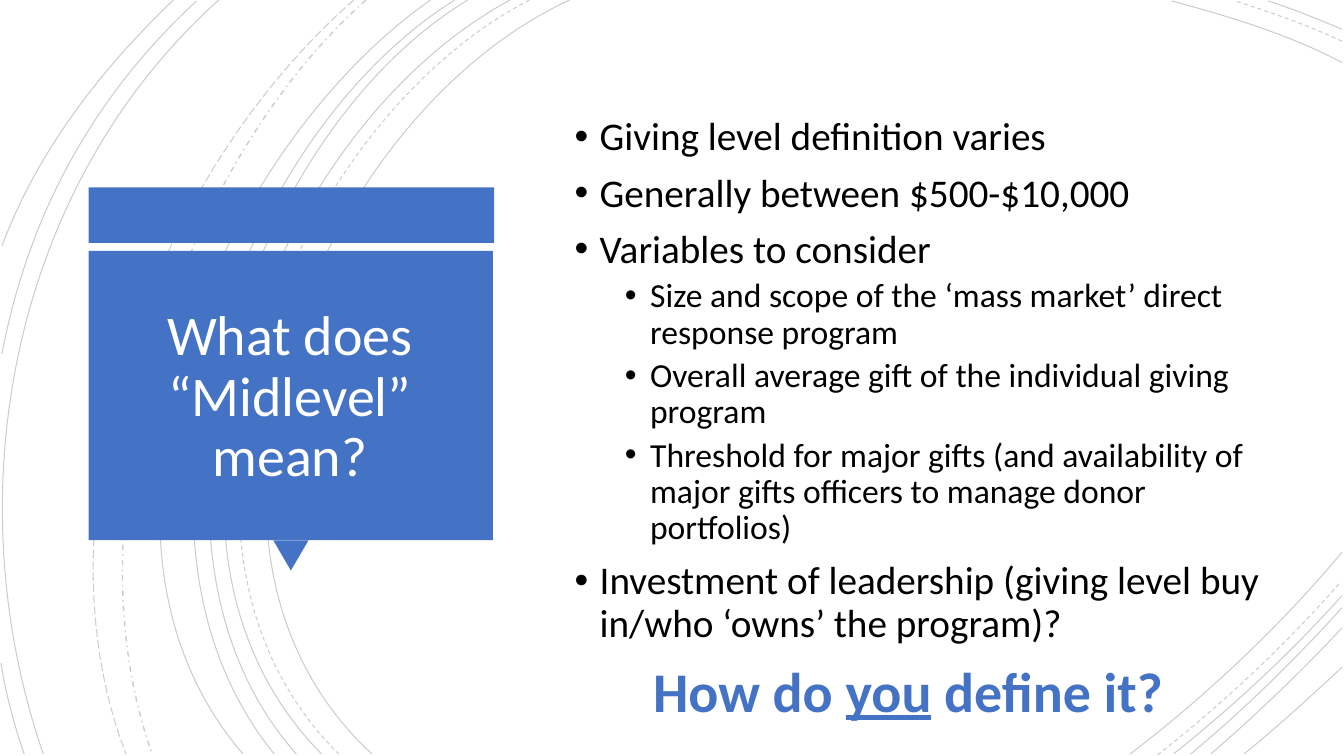
from lxml.etree import SubElement
from pptx import Presentation
from pptx.dml.color import RGBColor
from pptx.enum.dml import MSO_LINE
from pptx.enum.shapes import MSO_SHAPE
from pptx.enum.text import MSO_ANCHOR, MSO_AUTO_SIZE, PP_ALIGN
from pptx.oxml.ns import qn
from pptx.util import Inches, Pt

COLORS = {"accent": "4472C4", "text": "000000", "title": "FFFFFF", "arc": "000000"}
SOLID, DASH = MSO_LINE.SOLID, MSO_LINE.DASH
ARCS = [
    (SOLID, (5.65, 0), (3.15, 1.15), (1.43, 5.4), (3.69, 7.48)),
    (SOLID, (13.31, 0.62), (12.78, 0.34), (12.18, 0.16), (11.62, 0.01)),
    (SOLID, (11.21, 7.48), (11.97, 6.9), (12.69, 6.22), (13.31, 5.48)),
    (DASH, (5.25, 0), (2.85, 1.25), (1.23, 5.37), (3.36, 7.48)),
    (DASH, (13.31, 0.41), (12.97, 0.25), (12.6, 0.12), (12.25, 0.01)),
    (DASH, (11.48, 7.49), (12.13, 6.98), (12.75, 6.4), (13.3, 5.77)),
    (SOLID, (5.06, 0), (2.7, 1.27), (1.1, 5.37), (3.19, 7.48)),
    (SOLID, (13.31, 0.29), (13.07, 0.19), (12.83, 0.09), (12.58, 0.01)),
    (SOLID, (11.64, 7.48), (12.23, 7.01), (12.8, 6.48), (13.31, 5.91)),
    (SOLID, (4.64, 0), (2.44, 1.33), (1.1, 5.41), (2.94, 7.48)),
    (SOLID, (11.81, 7.48), (12.34, 7.04), (12.84, 6.55), (13.31, 6.03)),
    (SOLID, (4.51, 0), (2.31, 1.38), (0.97, 5.33), (2.72, 7.48)),
    (SOLID, (12.01, 7.48), (12.46, 7.09), (12.9, 6.67), (13.31, 6.23)),
    (SOLID, (4.27, 0), (2.17, 1.47), (0.53, 5.29), (2.41, 7.48)),
    (SOLID, (12.34, 7.48), (12.67, 7.21), (12.99, 6.92), (13.31, 6.62)),
    (MSO_LINE.DASH_DOT, (3.63, 0), (1.76, 1.66), (0.65, 5.09), (1.51, 7.48)),
    (MSO_LINE.LONG_DASH, (3.51, 0), (1.57, 1.69), (0.29, 4.99), (1.25, 7.48)),
    (SOLID, (2.17, 0), (0.11, 1.85), (-0.46, 4.9), (0.43, 7.48)),
    (SOLID, (1.95, 0.01), (0.92, 0.96), (0.28, 2.14), (0.02, 3.51)),
    (SOLID, (0.01, 6.58), (0.06, 6.89), (0.14, 7.19), (0.24, 7.48)),
    (SOLID, (1.72, 0), (1, 0.69), (0.37, 1.5), (0.02, 2.44)),
]
BULLETS = [
    (0, "Giving level definition varies"),
    (0, "Generally between $500-$10,000"),
    (0, "Variables to consider"),
    (1, "Size and scope of the ‘mass market’ direct response program"),
    (1, "Overall average gift of the individual giving program"),
    (1, "Threshold for major gifts (and availability of major gifts officers to manage donor portfolios)"),
    (0, "Investment of leadership (giving level buy in/who ‘owns’ the program)?"),
]
LEVELS = [(28, 10, 0.25), (24, 5, 0.75)]


class SlideBuilder:
    font = "Calibri"

    def __init__(self, s):
        self.s = s

    def color(self, name):
        return RGBColor.from_string(COLORS[name])

    def style(self, r, size, color, bold=False):
        r.font.name = self.font
        r.font.size = Pt(size)
        r.font.bold = bold
        r.font.color.rgb = self.color(color)

    def arc(self, dash, *points):
        start, *rest = [(Inches(x), Inches(y)) for x, y in points]
        builder = self.s.shapes.build_freeform(*start)
        builder.add_line_segments(rest, close=False)
        sp = builder.convert_to_shape()
        sp.shadow.inherit = False
        sp.fill.background()
        sp.line.color.rgb = self.color("arc")
        sp.line.width = Pt(1 if dash == MSO_LINE.DASH_DOT else 0.75)
        sp.line.dash_style = dash
        path = next(sp._element.iter(qn("a:path")))
        segments = path.findall(qn("a:lnTo"))
        curve = SubElement(path, qn("a:cubicBezTo"))
        for segment in segments:
            curve.append(segment[0])
            path.remove(segment)
        srgb = next(sp._element.spPr.iter(qn("a:srgbClr")))
        SubElement(srgb, qn("a:alpha"), val="20000")

    def block(self, kind, x, y, w, h, rotation=0):
        sp = self.s.shapes.add_shape(kind, Inches(x), Inches(y), Inches(w), Inches(h))
        sp.rotation = rotation
        sp.shadow.inherit = False
        sp.fill.solid()
        sp.fill.fore_color.rgb = self.color("accent")
        sp.line.fill.background()

    def title(self, text, x, y, w, h):
        sp = self.s.shapes.title
        self.s.shapes._spTree.append(sp._element)
        sp.left, sp.top, sp.width, sp.height = Inches(x), Inches(y), Inches(w), Inches(h)
        tf = sp.text_frame
        tf.text = text
        tf.word_wrap = True
        tf.auto_size = MSO_AUTO_SIZE.NONE
        tf.vertical_anchor = MSO_ANCHOR.MIDDLE
        p = tf.paragraphs[0]
        p.alignment = PP_ALIGN.CENTER
        p.line_spacing = 0.9
        self.style(p.runs[0], 40, "title")

    def text_box(self, x, y, w, h):
        tf = self.s.shapes.add_textbox(Inches(x), Inches(y), Inches(w), Inches(h)).text_frame
        tf.word_wrap = True
        return tf

    def bullets(self, items, x, y, w, h):
        tf = self.text_box(x, y, w, h)
        tf.margin_top = Inches(0.28)
        for i, (level, text) in enumerate(items):
            size, before, indent = LEVELS[level]
            p = tf.paragraphs[0] if i == 0 else tf.add_paragraph()
            p.text = text
            p.level = level
            p.line_spacing = 0.9
            p.space_before = Pt(before if i else 0)
            pPr = p._p.get_or_add_pPr()
            pPr.set("marL", str(Inches(indent)))
            pPr.set("indent", str(Inches(-0.25)))
            SubElement(pPr, qn("a:buFont"), typeface="Arial")
            SubElement(pPr, qn("a:buChar"), char="•")
            self.style(p.runs[0], size, "text")

    def question(self, parts, x, y, w, h):
        tf = self.text_box(x, y, w, h)
        tf.auto_size = MSO_AUTO_SIZE.SHAPE_TO_FIT_TEXT
        p = tf.paragraphs[0]
        for text, underline in parts:
            r = p.add_run()
            r.text = text
            self.style(r, 40, "accent", True)
            r.font.underline = underline


def main():
    prs = Presentation()
    prs.slide_width, prs.slide_height = Inches(13.33), Inches(7.5)
    slide = SlideBuilder(prs.slides.add_slide(prs.slide_layouts[5]))
    for arc in ARCS:
        slide.arc(*arc)
    slide.block(MSO_SHAPE.RECTANGLE, 0.88, 1.86, 4.02, 0.55)
    slide.block(MSO_SHAPE.ISOSCELES_TRIANGLE, 2.71, 5.36, 0.35, 0.3, 180)
    slide.block(MSO_SHAPE.RECTANGLE, 0.88, 2.49, 4.01, 2.87)
    slide.title("What does “Midlevel” mean?", 0.99, 2.64, 3.77, 2.62)
    slide.bullets(BULLETS, 5.6, 0.88, 7.03, 6.09)
    slide.question([("How do ", False), ("you", True), (" define it?", False)], 6.38, 6.46, 5.33, 0.77)
    prs.save("out.pptx")


if __name__ == "__main__":
    main()
